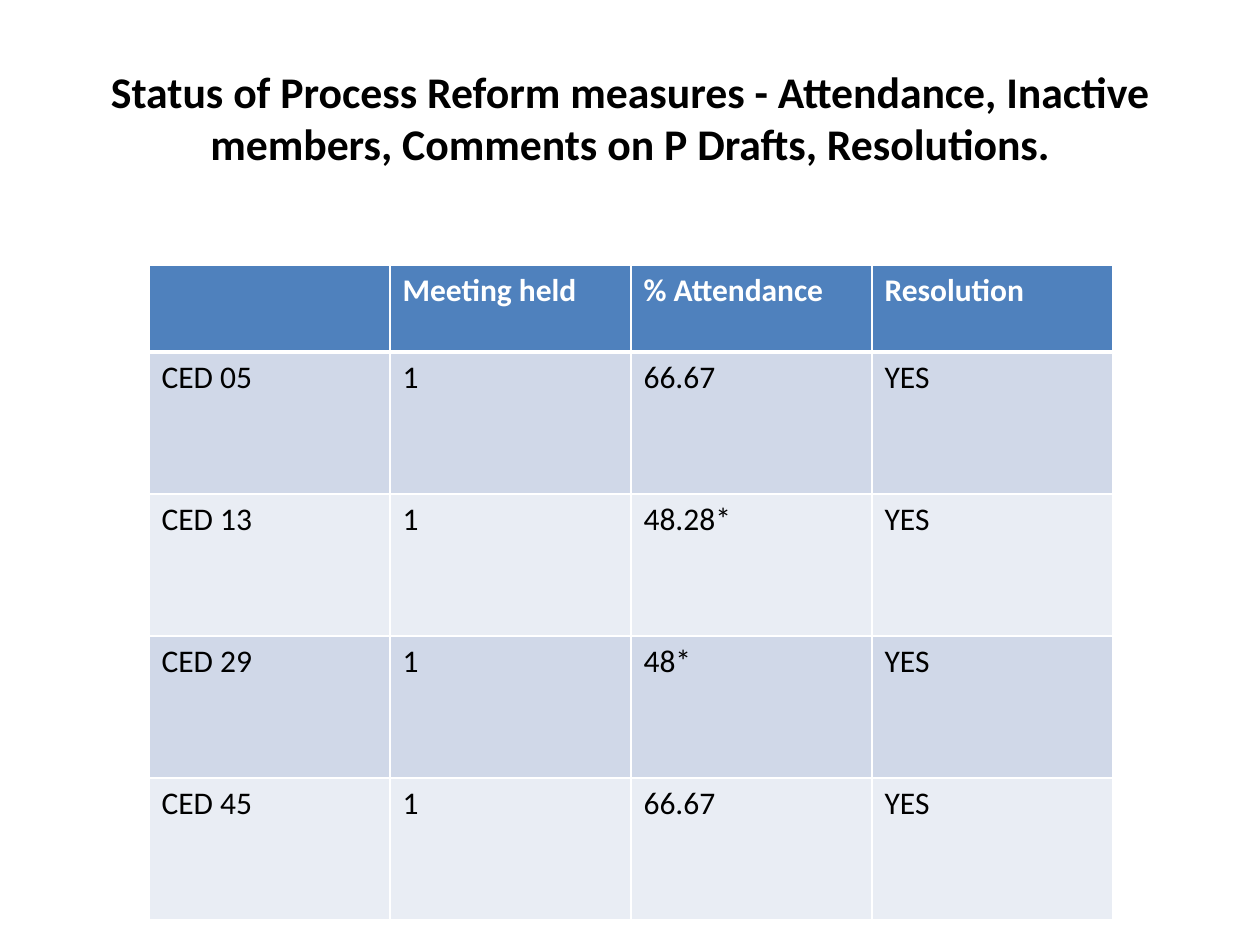
from dataclasses import dataclass

from lxml import etree
from pptx import Presentation
from pptx.dml.color import RGBColor
from pptx.enum.text import MSO_ANCHOR, MSO_AUTO_SIZE, PP_ALIGN
from pptx.oxml.ns import qn
from pptx.util import Emu, Pt

CENTER = PP_ALIGN.CENTER
MIDDLE = MSO_ANCHOR.MIDDLE
NO_AUTOFIT = MSO_AUTO_SIZE.NONE

EMU_PER_PX = 914400 / 126

WHITE = RGBColor(0xFF, 0xFF, 0xFF)
BLACK = RGBColor(0x00, 0x00, 0x00)
HEADER_BLUE = RGBColor(0x4F, 0x81, 0xBD)
BAND_DARK = RGBColor(0xD0, 0xD8, 0xE8)
BAND_LIGHT = RGBColor(0xE9, 0xED, 0xF4)

TITLE_FONT = {"name": "Calibri", "size": Pt(25), "bold": True}
HEADER_FONT = {"name": "Calibri", "size": Pt(18), "bold": True}
BODY_FONT = {"name": "Calibri", "size": Pt(18), "bold": False}

TITLE = (
    "Status of Process Reform measures - Attendance, Inactive members, "
    "Comments on P Drafts, Resolutions."
)
HEADINGS = ("", "Meeting held", "% Attendance", "Resolution")
COLUMN_WIDTH = 241
HEADER_HEIGHT = 87
COMMITTEE_HEIGHT = 142


@dataclass(frozen=True)
class Committee:
    code: str
    meetings: str
    attendance: str
    resolution: str = "YES"

    def values(self) -> tuple[str, ...]:
        return self.code, self.meetings, self.attendance, self.resolution


@dataclass(frozen=True)
class RowStyle:
    fill: RGBColor
    text_color: RGBColor
    font: dict
    bottom_border: int = 1


COMMITTEES = (
    Committee("CED 05", "1", "66.67"),
    Committee("CED 13", "1", "48.28*"),
    Committee("CED 29", "1", "48*"),
    Committee("CED 45", "1", "66.67"),
)
HEADER_STYLE = RowStyle(HEADER_BLUE, WHITE, HEADER_FONT, 3)
BAND_STYLES = (
    RowStyle(BAND_DARK, BLACK, BODY_FONT),
    RowStyle(BAND_LIGHT, BLACK, BODY_FONT),
)


def px(length: int) -> Emu:
    return Emu(round(length * EMU_PER_PX))


def apply_font(font, formats: dict, color: RGBColor) -> None:
    for attribute, value in formats.items():
        setattr(font, attribute, value)
    font.color.rgb = color


def add_border(cell, side: str, width: int) -> None:
    properties = cell._tc.get_or_add_tcPr()
    border = etree.SubElement(properties, qn(f"a:ln{side}"), w=str(Pt(width)))
    fill = etree.SubElement(border, qn("a:solidFill"))
    etree.SubElement(fill, qn("a:srgbClr"), val=str(WHITE))


def fill_row(row, values: tuple[str, ...], style: RowStyle, top_border: int) -> None:
    borders = {"L": 1, "R": 1, "T": top_border, "B": style.bottom_border}
    for cell, value in zip(row.cells, values):
        for side, width in borders.items():
            add_border(cell, side, width)
        cell.fill.solid()
        cell.fill.fore_color.rgb = style.fill
        cell.text = value
        apply_font(cell.text_frame.paragraphs[0].font, style.font, style.text_color)


def place_title(slide) -> None:
    title = slide.shapes.title
    position = {"left": 63, "top": 38, "width": 1134, "height": 158}
    for attribute, length in position.items():
        setattr(title, attribute, px(length))
    title.text = TITLE
    frame_format = {
        "word_wrap": True,
        "auto_size": NO_AUTOFIT,
        "vertical_anchor": MIDDLE,
    }
    for attribute, value in frame_format.items():
        setattr(title.text_frame, attribute, value)
    heading = title.text_frame.paragraphs[0]
    heading.alignment = CENTER
    apply_font(heading.runs[0].font, TITLE_FONT, BLACK)


def add_attendance_table(slide) -> None:
    attendance = slide.shapes.add_table(
        len(COMMITTEES) + 1,
        len(HEADINGS),
        px(149),
        px(265),
        px(COLUMN_WIDTH * len(HEADINGS)),
        px(HEADER_HEIGHT + COMMITTEE_HEIGHT * len(COMMITTEES)),
    ).table
    for column in attendance.columns:
        column.width = px(COLUMN_WIDTH)
    header, *committee_rows = attendance.rows
    header.height = px(HEADER_HEIGHT)
    fill_row(header, HEADINGS, HEADER_STYLE, 1)
    top_border = HEADER_STYLE.bottom_border
    for index, (row, committee) in enumerate(zip(committee_rows, COMMITTEES)):
        row.height = px(COMMITTEE_HEIGHT)
        style = BAND_STYLES[index % len(BAND_STYLES)]
        fill_row(row, committee.values(), style, top_border)
        top_border = style.bottom_border


def main() -> None:
    presentation = Presentation()
    presentation.slide_width = px(1260)
    presentation.slide_height = px(945)
    slide = presentation.slides.add_slide(
        presentation.slide_layouts.get_by_name("Title Only")
    )
    place_title(slide)
    add_attendance_table(slide)
    presentation.save("out.pptx")


if __name__ == "__main__":
    main()
